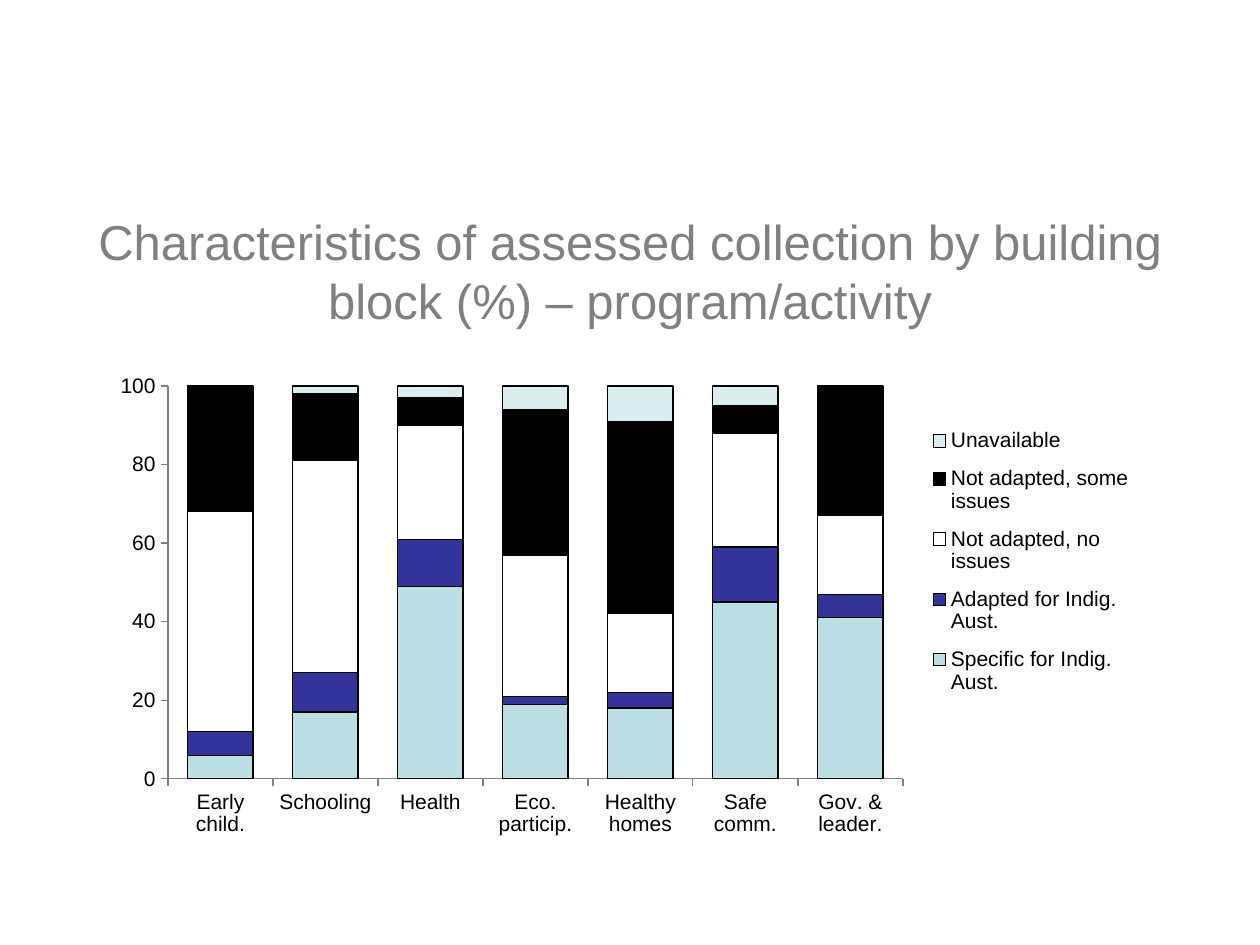
from dataclasses import dataclass

from lxml import etree
from pptx import Presentation
from pptx.chart.data import CategoryChartData
from pptx.dml.color import RGBColor
from pptx.enum.chart import XL_CHART_TYPE, XL_LEGEND_POSITION, XL_TICK_MARK
from pptx.enum.text import MSO_ANCHOR, PP_ALIGN
from pptx.oxml.ns import qn
from pptx.util import Pt

STACKED = XL_CHART_TYPE.COLUMN_STACKED
RIGHT = XL_LEGEND_POSITION.RIGHT
OUT = XL_TICK_MARK.OUTSIDE
MIDDLE = MSO_ANCHOR.MIDDLE
CENTER = PP_ALIGN.CENTER
SCALE = 914400 / 126


@dataclass(frozen=True)
class Theme:
    """Fonts, sizes and colours of the slide."""
    font: str = "Arial"
    head: int = 28
    label: int = 12
    edge: float = 0.75
    grey: str = "808080"
    black: str = "000000"
    white: str = "FFFFFF"
    teal: str = "BBE0E3"
    navy: str = "333399"
    pale: str = "DAEDEF"


def color(code):
    """Turn a hex code into a colour."""
    return RGBColor.from_string(code)


def px(*sizes):
    """Turn pixel lengths into EMU."""
    return [round(size * SCALE) for size in sizes]


class Deck:
    """Holds the theme and the current slide."""

    def __init__(self, theme, width, height):
        """Start a deck with one blank slide."""
        self.theme = theme
        self.file = Presentation()
        self.file.slide_width, self.file.slide_height = px(width, height)
        self.slide = self.file.slides.add_slide(self.file.slide_layouts[6])

    def style(self, font, size, code):
        """Set the face, size and colour of a font."""
        font.name = self.theme.font
        font.size = Pt(size)
        font.color.rgb = color(code)

    def title(self, text, *box):
        """Add the centred heading."""
        frame = self.slide.shapes.add_textbox(*px(*box)).text_frame
        frame.word_wrap = True
        frame.vertical_anchor = MIDDLE
        para = frame.paragraphs[0]
        para.alignment = CENTER
        run = para.add_run()
        run.text = text
        self.style(run.font, self.theme.head, self.theme.grey)

    def chart(self, names, rows, plot, key, *box):
        """Add a stacked column chart with a legend."""
        data = CategoryChartData(number_format="0")
        data.categories = names
        for name, _, values in rows:
            data.add_series(name, values)
        chart = self.slide.shapes.add_chart(STACKED, *px(*box), data).chart
        self.style(chart.font, self.theme.label, self.theme.black)
        chart.has_title = False
        chart.has_legend = True
        chart.legend.position = RIGHT
        chart.legend.include_in_layout = False
        bars = chart.plots[0]
        bars.gap_width, bars.overlap = 61, 100
        bars.vary_by_categories = False
        for series, (_, code, _) in zip(bars.series, rows):
            look = series.format
            look.fill.solid()
            look.fill.fore_color.rgb = color(code)
            look.line.color.rgb = color(self.theme.black)
            look.line.width = Pt(self.theme.edge)
        self.axes(chart)
        size = box[2:] * 2
        inner = [("layoutTarget", "inner")]
        self.place(bars._element.getparent(), 0, inner, plot, size)
        self.place(chart.legend._element, 1, [], key, size)

    def axes(self, chart):
        """Set ticks, lines and the value range."""
        value = chart.value_axis
        value.minimum_scale, value.maximum_scale = 0, 100
        value.major_unit = 20
        value.has_major_gridlines = False
        value.tick_labels.number_format = "0"
        value.tick_labels.number_format_is_linked = False
        for axis in (chart.category_axis, value):
            axis.major_tick_mark = OUT
            axis.format.line.color.rgb = color(self.theme.grey)
            axis.format.line.width = Pt(self.theme.edge)

    def place(self, part, index, parts, box, size):
        """Fix a chart part at a pixel box within the chart."""
        for old in part.findall(qn("c:layout")):
            part.remove(old)
        layout = etree.Element(qn("c:layout"))
        part.insert(index, layout)
        manual = etree.SubElement(layout, qn("c:manualLayout"))
        modes = [("xMode", "edge"), ("yMode", "edge")]
        shares = [(tag, a / b) for tag, a, b in zip("xywh", box, size)]
        for tag, item in parts + modes + shares:
            etree.SubElement(manual, qn(f"c:{tag}"), val=str(item))


def main():
    """Build and save the slide."""
    theme = Theme()
    deck = Deck(theme, 1260, 945)
    deck.title("Characteristics of assessed collection by building block (%) "
               "– program/activity", 63, 191, 1134, 158)
    names = ["Early child.", "Schooling", "Health", "Eco. particip.",
             "Healthy homes", "Safe comm.", "Gov. & leader."]
    rows = [
        ("Specific for Indig. Aust.", theme.teal, (6, 17, 49, 19, 18, 45, 41)),
        ("Adapted for Indig. Aust.", theme.navy, (6, 10, 12, 2, 4, 14, 6)),
        ("Not adapted, no issues", theme.white, (56, 54, 29, 36, 20, 29, 20)),
        ("Not adapted, some issues", theme.black, (32, 17, 7, 37, 49, 7, 33)),
        ("Unavailable", theme.pale, (1, 2, 3, 6, 10, 5, 0)),
    ]
    plot, key = (53, 32, 735, 393), (807, 60, 218, 295)
    deck.chart(names, rows, plot, key, 115, 354, 1032, 507)
    deck.file.save("out.pptx")


if __name__ == "__main__":
    main()
